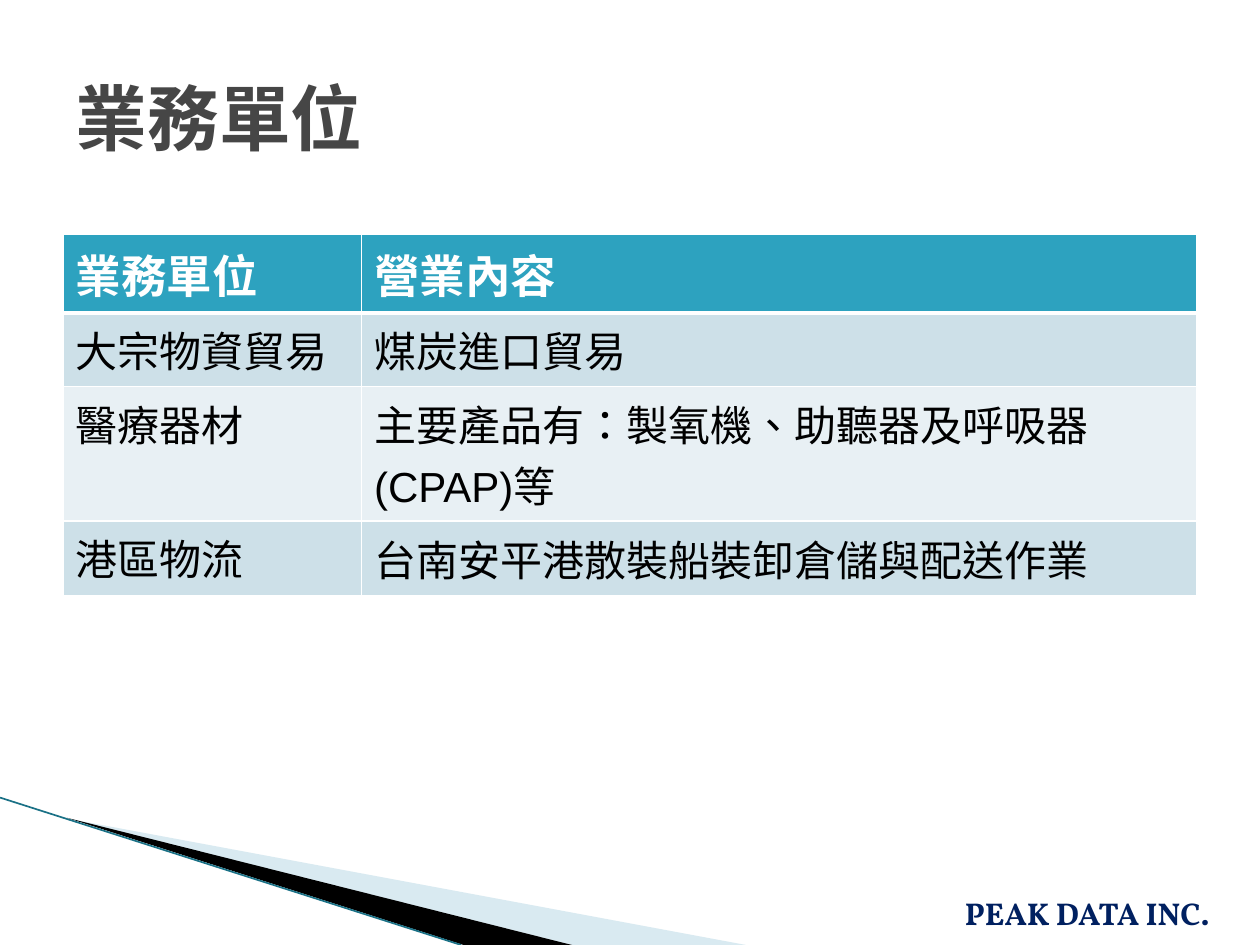
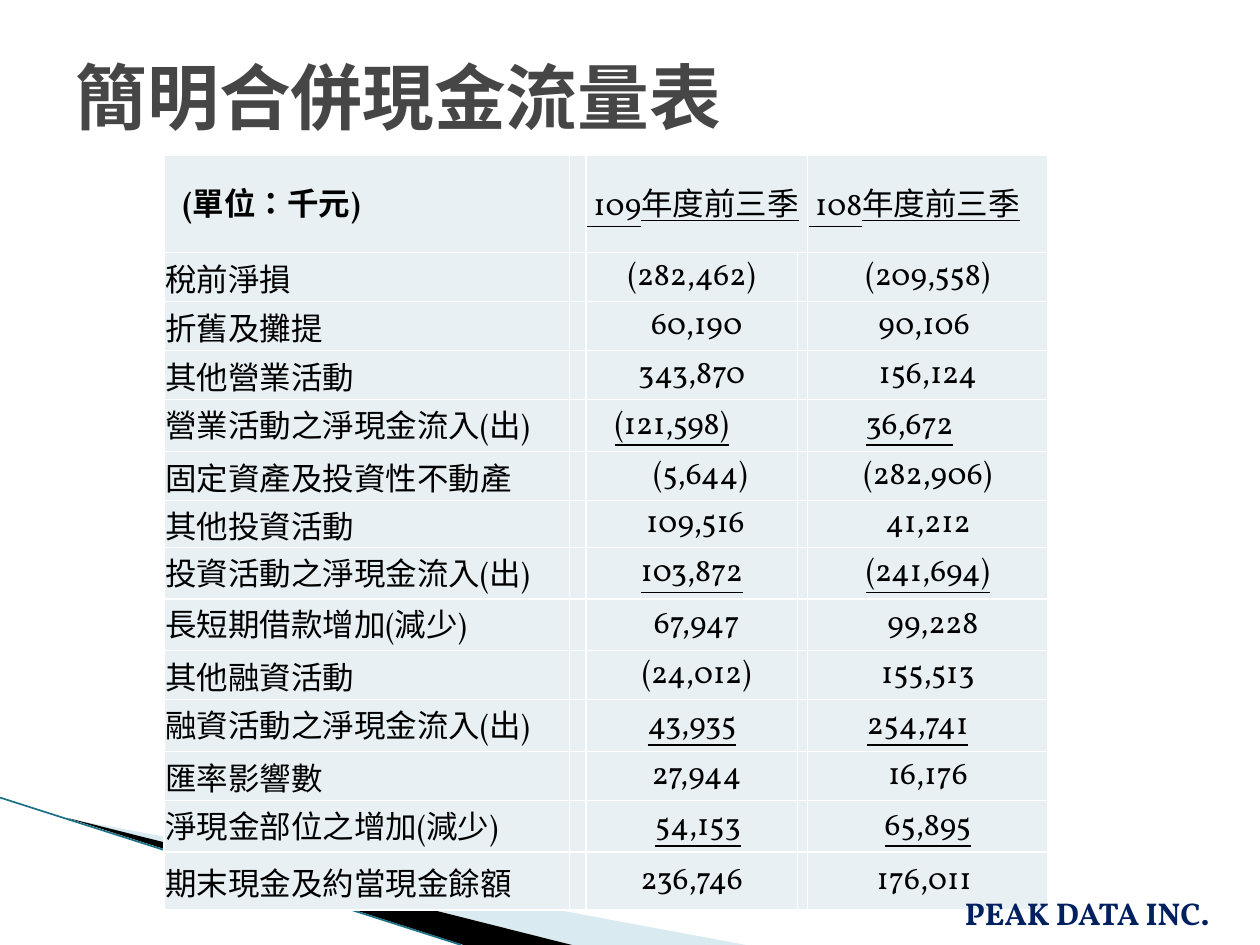
from dataclasses import dataclass

from lxml import etree
from pptx import Presentation
from pptx.dml.color import RGBColor
from pptx.enum import shapes, text
from pptx.oxml.ns import qn
from pptx.util import Inches, Pt

# Shared look
WHITE = RGBColor(0xFF, 0xFF, 0xFF)
BLACK = RGBColor(0, 0, 0)
RED = RGBColor(0xFF, 0, 0)
GREY = RGBColor(0x46, 0x46, 0x46)
NAVY = RGBColor(0x00, 0x20, 0x60)
HEADER = RGBColor(0x2D, 0xA2, 0xBF)
BAND = RGBColor(0xCD, 0xE0, 0xE8)
PALE = RGBColor(0xE8, 0xF0, 0xF4)
SWOOSH = RGBColor(0xA0, 0xCB, 0xDC)
EDGE = RGBColor(0x1A, 0x71, 0x86)
SANS, SANS_TC = "Noto Sans CJK SC", "Noto Sans CJK TC"
SERIF, ARIAL = "Vollkorn", "Arial"
MIDDLE, TOP = text.MSO_ANCHOR.MIDDLE, text.MSO_ANCHOR.TOP
LEFT, CENTER = text.PP_ALIGN.LEFT, text.PP_ALIGN.CENTER


@dataclass(frozen=True)
class Style:
    size: float
    color: RGBColor = BLACK
    latin: str = SANS
    asian: str = SANS
    bold: bool = False
    underline: bool = False


@dataclass(frozen=True)
class Figure:
    """A number: centred with a shift, or set from a start with tab stops."""
    value: str
    shift: float = 0
    underline: bool = False
    start: float = 0
    stops: tuple[float, ...] = ()


@dataclass(frozen=True)
class CashRow:
    label: str
    height: float
    now: Figure
    before: Figure


TITLE = Style(41, GREY, bold=True)
FOOTER = Style(18, NAVY, SERIF, bold=True)

UNITS = [
    ("業務單位", "營業內容", 0.62),
    ("大宗物資貿易", "煤炭進口貿易", 0.58),
    ("醫療器材", "主要產品有：製氧機、助聽器及呼吸器(CPAP)等", 1.06),
    ("港區物流", "台南安平港散裝船裝卸倉儲與配送作業", 0.59),
]

CASH_FLOW = [
    CashRow("稅前淨損", 0.39, Figure("(282,462)"), Figure("(209,558)")),
    CashRow("折舊及攤提", 0.39, Figure("60,190", 0.04), Figure("90,106", -0.03)),
    CashRow("其他營業活動", 0.39, Figure("343,870"), Figure("156,124")),
    CashRow("營業活動之淨現金流入(出)", 0.41,
            Figure("(121,598)\t", underline=True, start=0.23, stops=(1.21,)),
            Figure("36,672\t", underline=True, start=0.46, stops=(0.99,))),
    CashRow("固定資產及投資性不動產", 0.39, Figure("(5,644)", 0.07), Figure("(282,906)")),
    CashRow("其他投資活動", 0.37, Figure("109,516", 0.03), Figure("41,212")),
    CashRow("投資活動之淨現金流入(出)", 0.41,
            Figure("103,872", underline=True), Figure("(241,694)", underline=True)),
    CashRow("長短期借款增加(減少)", 0.41, Figure("67,947", 0.04), Figure("99,228", 0.04)),
    CashRow("其他融資活動", 0.39, Figure("(24,012)", 0.04), Figure("155,513")),
    CashRow("融資活動之淨現金流入(出)", 0.41,
            Figure("\t43,935\t", underline=True, start=0.38, stops=(0.11, 0.9)),
            Figure("254,741\t", underline=True, start=0.47, stops=(0.96,))),
    CashRow("匯率影響數", 0.39, Figure("27,944", 0.04), Figure("16,176")),
    CashRow("淨現金部位之增加(減少)", 0.41,
            Figure("\t54,153", underline=True, start=0.45, stops=(0.1,)),
            Figure("65,895", underline=True)),
    CashRow("期末現金及約當現金餘額", 0.46, Figure("236,746"), Figure("176,011", -0.03)),
]


# Text helpers
def format_run(r, style: Style) -> None:
    f = r.font
    f.size, f.bold, f.underline = Pt(style.size), style.bold, style.underline
    f.name = style.latin
    f.color.rgb = style.color
    rpr = f._element
    rpr.set("lang", "zh-TW")
    ea = etree.Element(qn("a:ea"), typeface=style.asian)
    rpr.find(qn("a:latin")).addnext(ea)


def write(tf, words: str, style: Style, align=LEFT) -> None:
    tf.text = words
    p = tf.paragraphs[0]
    p.alignment = align
    for r in p.runs:
        format_run(r, style)


def add_tabs(p, stops: tuple[float, ...]) -> None:
    tabs = etree.SubElement(p._p.get_or_add_pPr(), qn("a:tabLst"))
    for stop in stops:
        etree.SubElement(tabs, qn("a:tab"), pos=str(Inches(stop)), algn="l")


# Slide frame: swoosh, title and footer
def add_wedge(slide, points: list[tuple[float, float]], color: RGBColor):
    (x, y), *rest = [(Inches(a), Inches(b)) for a, b in points]
    builder = slide.shapes.build_freeform(x, y)
    builder.add_line_segments(rest)
    sp = builder.convert_to_shape()
    sp.shadow.inherit = False
    sp.fill.solid()
    sp.fill.fore_color.rgb = color
    sp.line.fill.background()
    return sp


def add_frame(prs, title: str, top: float, anchor):
    slide = prs.slides.add_slide(prs.slide_layouts[5])
    sp = slide.shapes.title
    sp.left, sp.top, sp.width, sp.height = map(Inches, (0.5, top, 9, 1.25))
    tf = sp.text_frame
    tf.auto_size = text.MSO_AUTO_SIZE.NONE
    tf.vertical_anchor = anchor
    write(tf, title, TITLE)

    pale = add_wedge(slide, [(0.55, 6.5), (5.92, 7.5), (4.54, 7.5)], SWOOSH)
    color = pale.fill._xPr.find(".//" + qn("a:srgbClr"))
    etree.SubElement(color, qn("a:alpha"), val="40000")
    add_wedge(slide, [(0.53, 6.49), (4.54, 7.5), (3.68, 7.5)], BLACK)
    edge = slide.shapes.add_connector(shapes.MSO_CONNECTOR.STRAIGHT, Inches(0),
                                      Inches(6.33), Inches(3.66), Inches(7.5))
    edge.line.color.rgb = EDGE
    edge.line.width = Pt(0.95)
    etree.SubElement(edge._element.spPr, qn("a:effectLst"))
    return slide


def add_footer(slide) -> None:
    sp = slide.shapes.add_textbox(Inches(7.56), Inches(7.05), Inches(2.37), Inches(0.4))
    sp.text_frame.word_wrap = False
    write(sp.text_frame, "PEAK DATA INC.", FOOTER)


# Table helpers
def add_grid(slide, left: float, top: float, widths: list[float], heights: list[float]):
    table = slide.shapes.add_table(
        len(heights), len(widths), Inches(left), Inches(top),
        Inches(sum(widths)), Inches(sum(heights))).table
    table.first_row = table.horz_banding = False
    for column, width in zip(table.columns, widths):
        column.width = Inches(width)
    for row, height in zip(table.rows, heights):
        row.height = Inches(height)
    return table


def paint_cell(cell, color: RGBColor, top: float = 1, bottom: float = 1) -> None:
    tcpr = cell._tc.get_or_add_tcPr()
    for side, width in (("L", 1), ("R", 1), ("T", top), ("B", bottom)):
        ln = etree.SubElement(tcpr, qn(f"a:ln{side}"), w=str(Pt(width)))
        fill = etree.SubElement(ln, qn("a:solidFill"))
        etree.SubElement(fill, qn("a:srgbClr"), val=str(WHITE))
    cell.fill.solid()
    cell.fill.fore_color.rgb = color


def set_margins(cell, left: float = 0.01, right: float = 0.01) -> None:
    cell.margin_left, cell.margin_right = Inches(left), Inches(right)
    cell.margin_top, cell.margin_bottom = Inches(0.01), 0
    cell.vertical_anchor = MIDDLE


def write_figure(cell, figure: Figure) -> None:
    style = Style(18, latin=SERIF, underline=figure.underline)
    if figure.stops:
        set_margins(cell, left=figure.start)
        write(cell.text_frame, figure.value, style)
        add_tabs(cell.text_frame.paragraphs[0], figure.stops)
    else:
        set_margins(cell, 0.01 + max(0, 2 * figure.shift), 0.01 + max(0, -2 * figure.shift))
        write(cell.text_frame, figure.value, style, CENTER)


# Slide 1: business units
def build_units(prs) -> None:
    slide = add_frame(prs, "業務單位", 0.3, MIDDLE)
    table = add_grid(slide, 0.5, 1.86, [2.37, 6.63], [row[2] for row in UNITS])
    for i, row in enumerate(UNITS):
        for j, words in enumerate(row[:2]):
            cell = table.cell(i, j)
            if i == 0:
                paint_cell(cell, HEADER, bottom=3)
                style = Style(26, WHITE, bold=True)
            else:
                paint_cell(cell, BAND if i % 2 else PALE, top=3 if i == 1 else 1)
                style = Style(24, latin=ARIAL, asian=SANS_TC if "、" in words else SANS)
                cell.vertical_anchor = MIDDLE if j else TOP
            write(cell.text_frame, words, style)
    add_footer(slide)


# Slide 2: condensed cash flow
def build_cash_flow(prs) -> None:
    slide = add_frame(prs, "簡明合併現金流量表", 0.37, TOP)
    table = add_grid(slide, 1.3, 1.23, [3.22, 0.13, 1.68, 0.08, 1.91],
                     [0.76] + [row.height for row in CASH_FLOW])
    for cell in table.iter_cells():
        paint_cell(cell, PALE)
        set_margins(cell)

    table.cell(0, 2).merge(table.cell(0, 3))
    set_margins(table.cell(0, 0), left=0.15)
    write(table.cell(0, 0).text_frame, "(單位：千元)", Style(18, latin=SERIF, bold=True))
    for j, period in ((2, " 109年度前三季"), (4, " 108年度前三季")):
        write(table.cell(0, j).text_frame, period, Style(18, latin=SERIF, underline=True))

    for i, row in enumerate(CASH_FLOW, 1):
        write(table.cell(i, 0).text_frame, row.label, Style(18, latin=SERIF))
        write_figure(table.cell(i, 2), row.now)
        write_figure(table.cell(i, 4), row.before)

    # The rule after the operating total is red
    p = table.cell(4, 2).text_frame.paragraphs[0]
    p.runs[0].text = p.runs[0].text.rstrip("\t")
    r = p.add_run()
    r.text = "\t"
    format_run(r, Style(18, RED, SERIF, underline=True))
    add_footer(slide)


def main() -> None:
    prs = Presentation()
    prs.slide_width, prs.slide_height = Inches(10), Inches(7.5)
    build_units(prs)
    build_cash_flow(prs)
    prs.save("out.pptx")


if __name__ == "__main__":
    main()
